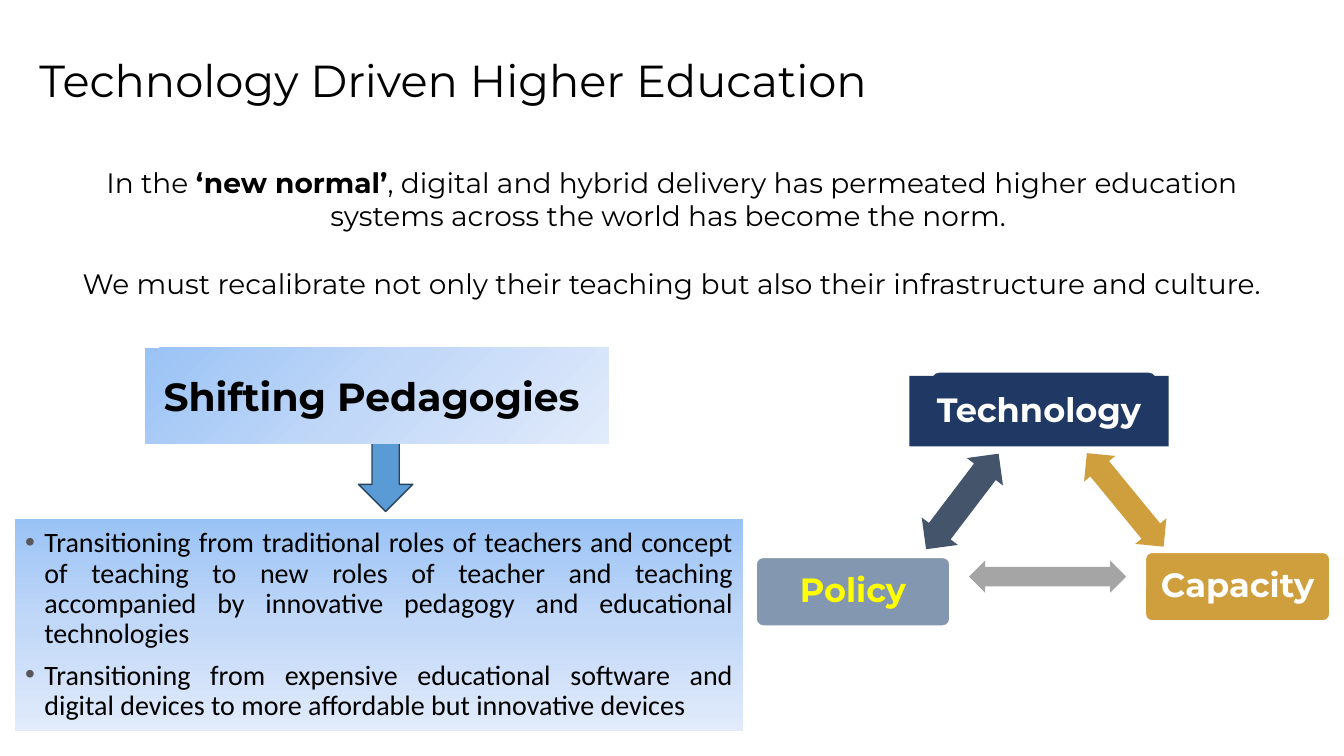
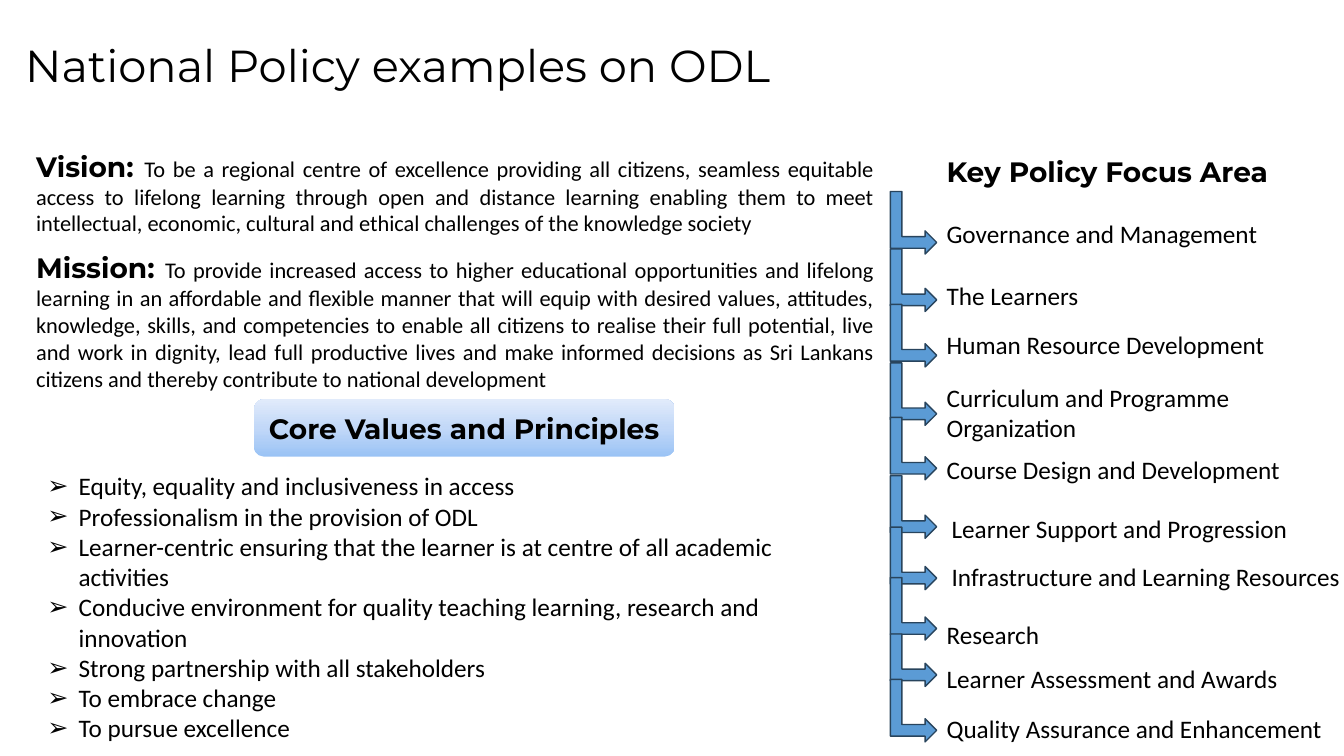
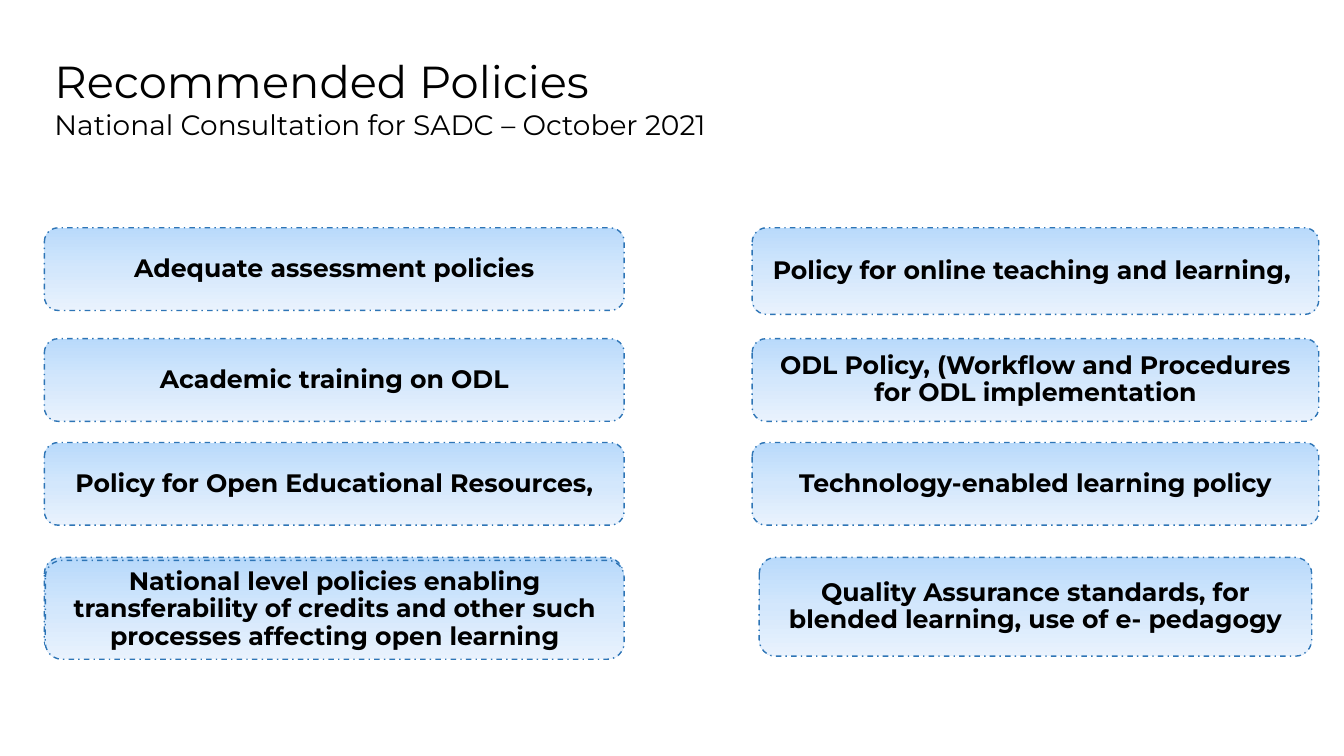
import copy

import lxml.etree
import pptx
import pptx.dml.color
import pptx.enum.dml
import pptx.enum.shapes
import pptx.enum.text
import pptx.oxml.ns
import pptx.util

Inches = pptx.util.Inches
Pt = pptx.util.Pt
SHAPE = pptx.enum.shapes.MSO_SHAPE
ALIGN = pptx.enum.text.PP_ALIGN
ANCHOR = pptx.enum.text.MSO_ANCHOR
qn = pptx.oxml.ns.qn

COLOURS = {
    "black": "000000",
    "white": "FFFFFF",
    "yellow": "FFFF00",
    "navy": "203864",
    "gold": "CF9E3D",
    "grey": "A5A5A5",
    "steel": "8497B0",
    "slate": "44546A",
    "arrow": "5B9BD5",
    "arrow edge": "28445D",
    "card edge": "2E75B6",
    "bullet": "57575B",
}
GRADIENTS = {
    "sky": ("9AC3F5", "C2D8F8", "E1EBFB"),
    "card": ("B9DAFB", "D3E7FC", "E9F2FD"),
}
FONTS = {
    "title": {"name": "Montserrat", "size": Pt(32), "bold": False},
    "lead": {"name": "Montserrat", "size": Pt(20), "bold": False},
    "heading": {"name": "Montserrat", "size": Pt(20), "bold": True},
    "banner": {"name": "Montserrat", "size": Pt(28), "bold": True},
    "node": {"name": "Montserrat", "size": Pt(24), "bold": True},
    "card": {"name": "Montserrat", "size": Pt(18), "bold": True},
    "list": {"name": "Calibri", "size": Pt(20), "bold": False},
    "label": {"name": "Calibri", "size": Pt(18), "bold": False},
    "statement": {"name": "Calibri", "size": Pt(16), "bold": False},
}


def rgb(colour):
    return pptx.dml.color.RGBColor.from_string(COLOURS.get(colour, colour))


def apply(target, values):
    for name, value in values.items():
        setattr(target, name, value)


class Deck:
    def __init__(self):
        self.presentation = pptx.Presentation()
        apply(self.presentation, {"slide_width": Inches(13.33), "slide_height": Inches(7.5)})
        self.slide = None

    def new_slide(self, layout):
        self.slide = self.presentation.slides.add_slide(
            self.presentation.slide_layouts.get_by_name(layout))

    def place(self, shape, at):
        apply(shape, dict(zip(("left", "top", "width", "height"), map(Inches, at))))

    def set_text(self, shape, paragraphs, colour="black", anchor=ANCHOR.TOP, margin=None,
                 gap=0, bullet=None, bullet_colour="black", indent=0, **layout):
        frame = shape.text_frame
        apply(frame, {"word_wrap": True, "vertical_anchor": anchor,
                      "auto_size": pptx.enum.text.MSO_AUTO_SIZE.NONE})
        if margin is not None:
            sides = ("left", "top", "right", "bottom")
            apply(frame, {f"margin_{side}": Inches(margin) for side in sides})
        for index, runs in enumerate(paragraphs):
            paragraph = frame.add_paragraph() if index else frame.paragraphs[0]
            if bullet:
                self.bullet(paragraph, bullet, bullet_colour, indent)
            apply(paragraph, {"space_before": Pt(gap if index else 0), **layout})
            for text, style in runs:
                run = paragraph.add_run()
                run.text = text
                apply(run.font, FONTS[style])
                run.font.color.rgb = rgb(colour)

    def bullet(self, paragraph, mark, colour, indent):
        properties = paragraph._p.get_or_add_pPr()
        properties.set("marL", str(Inches(indent)))
        properties.set("indent", str(-Inches(indent)))
        tint = lxml.etree.SubElement(properties, qn("a:buClr"))
        lxml.etree.SubElement(tint, qn("a:srgbClr"), val=COLOURS[colour])
        lxml.etree.SubElement(properties, qn("a:buFont"), typeface="Arial")
        lxml.etree.SubElement(properties, qn("a:buChar"), char=mark)

    def paint(self, shape, fill, angle=90):
        if fill not in GRADIENTS:
            shape.fill.solid()
            shape.fill.fore_color.rgb = rgb(fill)
            return
        shape.fill.gradient()
        stops = shape._element.spPr.find(f".//{qn('a:gsLst')}")
        stops.insert(1, copy.deepcopy(stops[0]))
        for index, colour in enumerate(GRADIENTS[fill]):
            stop = shape.fill.gradient_stops[index]
            stop.color.rgb = rgb(colour)
            stop.position = index / 2
        shape.fill.gradient_angle = -angle % 360

    def title(self, at, paragraphs, **layout):
        title = self.slide.shapes.title
        self.place(title, at)
        self.set_text(title, paragraphs, alignment=ALIGN.LEFT, **layout)

    def bullets(self, at, items, style, fill=None, **layout):
        body = self.slide.placeholders[1]
        self.place(body, at)
        if fill:
            self.paint(body, fill)
        self.set_text(body, [[(item, style)] for item in items], **layout)

    def text(self, at, paragraphs, **layout):
        self.set_text(self.slide.shapes.add_textbox(*map(Inches, at)), paragraphs, **layout)

    def block(self, kind, at, fill, edge=None, dash=None, angle=90, rotation=0,
              adjust=(), text=None, style=None, **layout):
        block = self.slide.shapes.add_shape(kind, *map(Inches, at))
        block.shadow.inherit = False
        block.rotation = rotation
        for index, value in enumerate(adjust):
            block.adjustments[index] = value
        self.paint(block, fill, angle)
        if edge:
            block.line.color.rgb = rgb(edge)
            apply(block.line, {"width": Pt(1), "dash_style": dash})
        else:
            block.line.fill.background()
        if text:
            self.set_text(block, [[(text, style)]], anchor=ANCHOR.MIDDLE,
                          alignment=ALIGN.CENTER, **layout)

    def node(self, kind, at, fill, text=None, colour="white", **look):
        self.block(kind, at, fill, text=text, style="node", colour=colour,
                   margin=0.1, line_spacing=0.9, **look)

    def card(self, at, text=None):
        self.block(SHAPE.FLOWCHART_ALTERNATE_PROCESS, at, "card", edge="card edge",
                   dash=pptx.enum.dml.MSO_LINE.DASH_DOT, text=text, style="card",
                   margin=0.07, line_spacing=0.9)


def higher_education(deck):
    deck.new_slide("Title and Content")
    deck.title((0.29, 0.1, 11.5, 1.45), [[("Technology Driven Higher Education", "title")]],
               anchor=ANCHOR.MIDDLE, line_spacing=0.9)
    deck.text((0.44, 1.59, 12.45, 1.72), [
        [("In the ", "lead"), ("‘new normal’", "heading"),
         (", digital and hybrid delivery has permeated higher education systems "
          "across the world has become the norm. ", "lead")],
        [("We must recalibrate not only their teaching but also their infrastructure "
          "and culture.", "lead")],
    ], alignment=ALIGN.CENTER, gap=24.4)

    rounded = {"edge": "white", "adjust": (0.1,)}
    deck.node(SHAPE.ROUNDED_RECTANGLE, (9.24, 3.69, 2.23, 0.74), "navy", **rounded)
    deck.node(SHAPE.RECTANGLE, (9.02, 3.73, 2.57, 0.7), "navy", "Technology")
    deck.node(SHAPE.ROUNDED_RECTANGLE, (11.36, 5.48, 1.83, 0.68), "gold", "Capacity", **rounded)
    deck.node(SHAPE.ROUNDED_RECTANGLE, (7.5, 5.53, 1.92, 0.68), "steel", "Policy",
              colour="yellow", **rounded)
    for at, rotation, fill in (
        ((10.56, 4.76, 1.2, 0.4), 50.6, "gold"),
        ((9.61, 5.56, 1.56, 0.32), 180, "grey"),
        ((8.95, 4.75, 1.19, 0.45), 307.2, "slate"),
    ):
        deck.block(SHAPE.LEFT_RIGHT_ARROW, at, fill, rotation=rotation, adjust=(0.6, 0.5))

    deck.block(SHAPE.RIGHT_ARROW, (3.29, 4.27, 1.07, 0.54), "arrow", edge="arrow edge",
               rotation=90)
    deck.block(SHAPE.RECTANGLE, (1.44, 3.45, 4.6, 0.95), "sky", angle=45,
               text="Shifting Pedagogies ", style="banner")
    deck.bullets((0.15, 5.15, 7.22, 2.1), (
        "Transitioning from traditional roles of teachers and concept of teaching to new "
        "roles of teacher and teaching accompanied by innovative pedagogy and educational "
        "technologies",
        "Transitioning from expensive educational software and digital devices to more "
        "affordable but innovative devices ",
    ), "list", fill="sky", anchor=ANCHOR.MIDDLE, alignment=ALIGN.JUSTIFY, line_spacing=0.9,
        gap=8, bullet="•", bullet_colour="bullet", indent=0.19)


def national_policy(deck):
    deck.new_slide("Title and Content")
    deck.title((0.15, -0.05, 11.5, 1.45), [[("National Policy examples on ODL", "title")]],
               anchor=ANCHOR.MIDDLE, line_spacing=0.9)

    deck.text((9.29, 1.48, 3.9, 0.44), [[("Key Policy Focus Area", "heading")]])
    focus_areas = (
        (1.98, 9.29, 2.12, 3.72, "Governance and Management"),
        (2.55, 9.29, 2.73, 3.72, "The Learners"),
        (3.1, 9.29, 3.22, 3.72, "Human Resource Development"),
        (3.68, 9.29, 3.74, 3.72, "Curriculum and Programme Organization"),
        (4.22, 9.29, 4.46, 3.72, "Course Design and Development"),
        (4.8, 9.34, 5.04, 3.72, "Learner Support and Progression"),
        (5.31, 9.34, 5.52, 4.14, "Infrastructure and Learning Resources"),
        (5.81, 9.29, 6.09, 3.72, "Research"),
        (6.32, 9.29, 6.53, 3.72, "Learner Assessment and Awards"),
        (6.82, 9.29, 7.03, 4.04, "Quality Assurance and Enhancement"),
    )
    for arrow_top, left, top, width, area in focus_areas:
        length = 0.52 if area == "Learner Assessment and Awards" else 0.62
        deck.block(SHAPE.BENT_UP_ARROW, (9.06 - length / 2, arrow_top, length, 0.46), "arrow",
                   edge="arrow edge", rotation=90)
        deck.text((left, top, width, 0.4), [[(area, "label")]])

    for top, height, heading, statement in (
        (1.43, 0.98, "Vision: ",
         "To be a regional centre of excellence providing all citizens, seamless equitable "
         "access to lifelong learning through open and distance learning enabling them to "
         "meet intellectual, economic, cultural and ethical challenges of the knowledge "
         "society "),
        (2.44, 1.51, "Mission: ",
         "To provide increased access to higher educational opportunities and lifelong "
         "learning in an affordable and flexible manner that will equip with desired values, "
         "attitudes, knowledge, skills, and competencies to enable all citizens to realise "
         "their full potential, live and work in dignity, lead full productive lives and make "
         "informed decisions as Sri Lankans citizens and thereby contribute to national "
         "development "),
    ):
        deck.text((0.26, top, 8.51, height), [[(heading, "heading"), (statement, "statement")]],
                  alignment=ALIGN.JUSTIFY)

    deck.block(SHAPE.ROUNDED_RECTANGLE, (2.52, 3.96, 4.17, 0.57), "sky", angle=270,
               text="Core Values and Principles ", style="heading")
    deck.bullets((0.37, 4.62, 8.27, 2.85), (
        "Equity, equality and inclusiveness in access",
        "Professionalism in the provision of ODL",
        "Learner-centric ensuring that the learner is at centre of all academic activities",
        "Conducive environment for quality teaching learning, research and innovation",
        "Strong partnership with all stakeholders",
        "To embrace change",
        "To pursue excellence",
    ), "label", bullet="➢", indent=0.31)


def recommended_policies(deck):
    deck.new_slide("Title Only")
    deck.title((0.44, 0.48, 10, 0.98), [
        [("Recommended Policies", "title")],
        [("National Consultation for SADC – October 2021", "lead")],
    ])
    policies = (
        (2.26, "Adequate assessment policies", 0.86, "Policy for online teaching and learning, "),
        (3.36, "Academic training on ODL", 0.82,
         "ODL Policy, (Workflow and Procedures for ODL implementation"),
        (4.39, "Policy for Open Educational Resources,", 0.82,
         "Technology-enabled learning policy"),
    )
    for top, left_policy, right_height, right_policy in policies:
        deck.card((0.44, top, 5.75, 0.82), left_policy)
        deck.card((7.46, top, 5.62, right_height), right_policy)
    deck.card((0.44, 5.53, 5.74, 0.98))
    deck.card((0.45, 5.56, 5.74, 0.98),
              "National level policies enabling transferability of credits and other such "
              "processes affecting open learning")
    deck.card((7.53, 5.53, 5.48, 0.98),
              "Quality Assurance standards, for blended learning, use of e- pedagogy")


def main():
    deck = Deck()
    higher_education(deck)
    national_policy(deck)
    recommended_policies(deck)
    deck.presentation.save("out.pptx")


if __name__ == "__main__":
    main()
